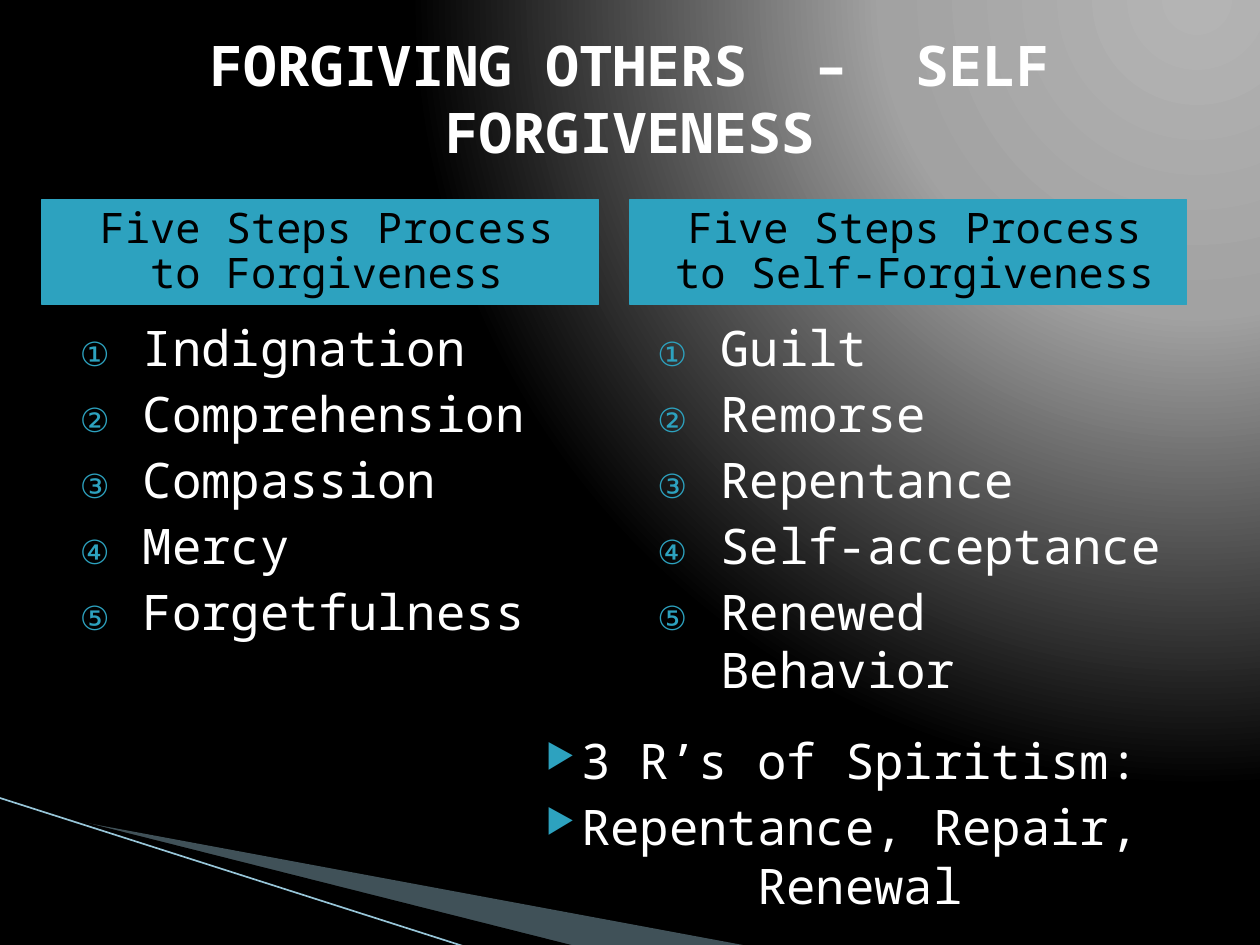
from lxml import etree
from pptx import Presentation
from pptx.dml.color import RGBColor
from pptx.enum.shapes import MSO_CONNECTOR, MSO_SHAPE
from pptx.enum.text import MSO_ANCHOR, PP_ALIGN
from pptx.oxml import parse_xml
from pptx.oxml.ns import qn
from pptx.util import Pt

FONT = "Noto Sans Mono"
WHITE = RGBColor(0xFF, 0xFF, 0xFF)
BLACK = RGBColor(0, 0, 0)
TEAL = RGBColor(0x2D, 0xA2, 0xBF)
MIST = RGBColor(0xA0, 0xCB, 0xDC)
PALE = RGBColor(0x97, 0xC5, 0xD8)


def style(paragraph, size, color, bold=False):
    paragraph.font.name = FONT
    paragraph.font.size = Pt(size)
    paragraph.font.color.rgb = color
    paragraph.font.bold = bold


def add_list(left, top, width, height, items, bullet, margin, indent, align=PP_ALIGN.LEFT):
    """Add a text box of bulleted lines; bullet is (tag, attribute, value)."""
    box = page.shapes.add_textbox(Pt(left), Pt(top), Pt(width), Pt(height))
    frame = box.text_frame
    frame.word_wrap = True
    tag, attribute, value = bullet
    for index, item in enumerate(items):
        paragraph = frame.paragraphs[0] if index == 0 else frame.add_paragraph()
        paragraph.text = item
        paragraph.alignment = align
        if index:
            paragraph.space_before = Pt(4)
        props = paragraph._p.get_or_add_pPr()
        props.set("marL", str(Pt(margin)))
        props.set("indent", str(Pt(indent)))
        color = etree.SubElement(props, qn("a:buClr"))
        etree.SubElement(color, qn("a:srgbClr"), val=str(TEAL))
        etree.SubElement(props, qn("a:buSzPct"), val="68000")
        etree.SubElement(props, qn(tag), {attribute: value})
        style(paragraph, 28, WHITE)


deck = Presentation()
deck.slide_width, deck.slide_height = Pt(720), Pt(540)
page = deck.slides.add_slide(deck.slide_layouts[6])

# Background: round glow from the top right corner
page.background.fill.solid()
solid = page.background._cSld.find(".//" + qn("a:solidFill"))
stops = "".join(
    f'<a:gs pos="{place * 1000}"><a:srgbClr val="{color}"/></a:gs>'
    for place, color in [(0, "B4B4B4"), (40, "A2A2A2"), (100, "000000")]
)
solid.getparent().replace(solid, parse_xml(
    '<a:gradFill xmlns:a="http://schemas.openxmlformats.org/drawingml/2006/main" rotWithShape="1">'
    f'<a:gsLst>{stops}</a:gsLst><a:path path="circle">'
    '<a:fillToRect l="95000" t="-106000" r="5000" b="206000"/></a:path></a:gradFill>'
))

# Wedges in the lower left corner
wedges = [
    ([(39.6, 468.4), (428.4, 540.7), (328.3, 540.7), (39.6, 468)], MIST, 40),
    ([(38.2, 467.3), (329, 540.7), (267.8, 541.4), (38.9, 468)], BLACK, 100),
]
for points, color, opacity in wedges:
    corners = [(Pt(x), Pt(y)) for x, y in points]
    builder = page.shapes.build_freeform(*corners[0])
    builder.add_line_segments(corners[1:], close=True)
    wedge = builder.convert_to_shape()
    wedge.shadow.inherit = False
    wedge.fill.solid()
    wedge.fill.fore_color.rgb = color
    wedge.line.fill.background()
    if opacity < 100:
        fill_color = wedge._element.spPr.find(qn("a:solidFill"))[0]
        etree.SubElement(fill_color, qn("a:alpha"), val=str(opacity * 1000))

# Thin slanted line
slant = page.shapes.add_connector(
    MSO_CONNECTOR.STRAIGHT, Pt(-0.7), Pt(455.8), Pt(267.1), Pt(541.4))
slant.line.color.rgb = PALE
slant.line.width = Pt(0.95)
etree.SubElement(slant._element.spPr, qn("a:effectLst"))

# Title
title = page.shapes.add_textbox(Pt(0), Pt(21.6), Pt(720), Pt(68.4))
title.text_frame.word_wrap = True
title.text_frame.vertical_anchor = MSO_ANCHOR.MIDDLE
heading = title.text_frame.paragraphs[0]
heading.text = "FORGIVING OTHERS  –  SELF FORGIVENESS"
heading.alignment = PP_ALIGN.CENTER
style(heading, 32, WHITE, bold=True)

# Two columns: header bar and numbered steps
columns = [
    (24, 30, "Five Steps Process to Forgiveness",
     ["Indignation", "Comprehension", "Compassion", "Mercy", "Forgetfulness"]),
    (360, 360, "Five Steps Process to Self-Forgiveness",
     ["Guilt", "Remorse", "Repentance", "Self-acceptance", "Renewed Behavior"]),
]
for bar_left, list_left, header, steps in columns:
    bar = page.shapes.add_shape(
        MSO_SHAPE.RECTANGLE, Pt(bar_left), Pt(114), Pt(318), Pt(60))
    bar.shadow.inherit = False
    bar.fill.solid()
    bar.fill.fore_color.rgb = TEAL
    bar.line.color.rgb = TEAL
    bar.line.width = Pt(0.75)
    frame = bar.text_frame
    frame.word_wrap = True
    frame.vertical_anchor = MSO_ANCHOR.MIDDLE
    frame.margin_left = Pt(14.4)
    label = frame.paragraphs[0]
    label.text = header
    label.alignment = PP_ALIGN.CENTER
    label.line_spacing = 0.9
    style(label, 24, BLACK)
    add_list(list_left, 178, 318, 356, steps,
             ("a:buAutoNum", "type", "circleNumDbPlain"), 44.6, -36)

# Closing summary
add_list(234, 414, 486, 90, ["3 R’s of Spiritism:", "Repentance, Repair, Renewal"],
         ("a:buChar", "char", "▶"), 28.8, -20.2, PP_ALIGN.CENTER)

deck.save("out.pptx")
